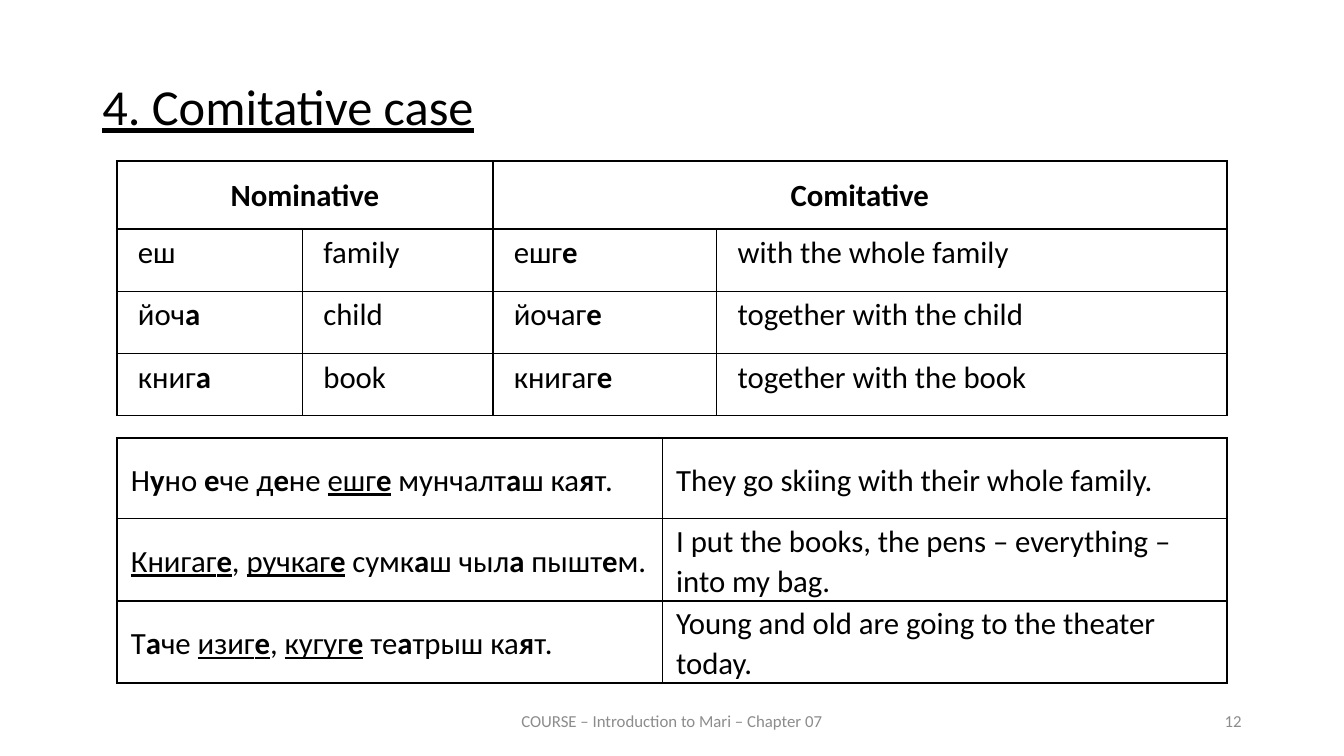
from pptx import Presentation
from pptx.dml.color import RGBColor
from pptx.enum.text import MSO_ANCHOR as Anchor, PP_ALIGN as Align
from pptx.oxml import parse_xml
from pptx.oxml.ns import nsdecls
from pptx.util import Pt

BLACK = RGBColor(0, 0, 0)
GRAY = RGBColor(0x8C, 0x8C, 0x8C)
FONT = "Calibri"
THIN, THICK = 1, 1.5
BOLD, UNDER = "*", "_"

TEXTS = [
    dict(text="COURSE – Introduction to Mari – Chapter 07", box=(318, 500.5, 324, 28.8),
         size=12, color=GRAY, align=Align.CENTER, anchor=Anchor.MIDDLE),
    dict(text="12", box=(678, 500.5, 216, 28.8),
         size=12, color=GRAY, align=Align.RIGHT, anchor=Anchor.MIDDLE),
    dict(text="_4. Comitative case_", box=(66, 54.7, 828, 59.8), size=36, color=BLACK,
         align=Align.JUSTIFY, anchor=Anchor.TOP, space=0.9, before=12),
]
CASES = dict(
    top=115, cols=(132.5, 136, 160, 364.2), rows=(47.7, 44.4, 44.4, 44.4),
    heavy=(0, 2, 4), head=True, pad=(15, 2, 15, 0),
    align=Align.JUSTIFY, anchor=Anchor.TOP,
    cells=[
        ("*Nominative*", None, "*Comitative*", None),
        ("еш", "family", "ешг*е*", "with the whole family"),
        ("йоч*а*", "child", "йочаг*е*", "together with the child"),
        ("книг*а*", "book", "книгаг*е*", "together with the book"),
    ])
SAMPLES = dict(
    top=312.8, cols=(389.5, 403.2), rows=(57.8, 57.8, 57.8),
    heavy=(0, 2), head=False, pad=(10, 1.4, 10, 0),
    align=Align.LEFT, anchor=Anchor.MIDDLE,
    cells=[
        ("Н*у*но *е*че д*е*не _ешг*е*_ мунчалт*а*ш ка*я*т.",
         "They go skiing with their whole family."),
        ("_Книгаг*е*_, _ручкаг*е*_ сумк*а*ш чыл*а* пышт*е*м.",
         "I put the books, the pens – everything – into my bag."),
        ("Т*а*че _изиг*е*_, _кугуг*е*_ те*а*трыш ка*я*т.",
         "Young and old are going to the theater today."),
    ])
LEFT = 83.5


def write(frame, text, size, color, align, space=None, before=None):
    para = frame.paragraphs[0]
    para.alignment = align
    if space:
        para.line_spacing = space
    if before:
        para.space_before = Pt(before)
    under = False
    for i, chunk in enumerate(text.split(BOLD)):
        for j, part in enumerate(chunk.split(UNDER)):
            if j:
                under = not under
            if part:
                run = para.add_run()
                run.text = part
                font = run.font
                font.name, font.size = FONT, Pt(size)
                font.bold, font.underline = i % 2 == 1, under
                font.color.rgb = color


def border(cell, widths):
    props = cell._tc.get_or_add_tcPr()
    for i, (side, width) in enumerate(zip("LRTB", widths)):
        props.insert(i, parse_xml(
            f'<a:ln{side} {nsdecls("a")} w="{Pt(width)}"><a:solidFill>'
            f'<a:srgbClr val="{BLACK}"/></a:solidFill></a:ln{side}>'))


def add_grid(slide, top, cols, rows, heavy, head, pad, align, anchor, cells):
    table = slide.shapes.add_table(len(rows), len(cols), Pt(LEFT), Pt(top),
                                   Pt(sum(cols)), Pt(sum(rows))).table
    table.first_row = table.horz_banding = False
    for col, width in zip(table.columns, cols):
        col.width = Pt(width)
    for row, height in zip(table.rows, rows):
        row.height = Pt(height)
    lines = (0, 1, len(rows)) if head else (0, len(rows))
    for r, line in enumerate(cells):
        for c, text in enumerate(line):
            cell = table.cell(r, c)
            title = head and r == 0
            inset = (20, 10, 20, 10) if title else pad
            (cell.margin_left, cell.margin_top,
             cell.margin_right, cell.margin_bottom) = map(Pt, inset)
            cell.vertical_anchor = anchor
            cell.fill.background()
            edges = [c in heavy, c + 1 in heavy, r in lines, r + 1 in lines]
            border(cell, [THICK if title or e else THIN for e in edges])
            if text is None:
                table.cell(r, c - 1).merge(cell)
            else:
                write(cell.text_frame, text, 22, BLACK,
                      Align.CENTER if title else align, 1.07)


def add_text(slide, box, anchor, **style):
    frame = slide.shapes.add_textbox(*map(Pt, box)).text_frame
    frame.word_wrap = True
    frame.vertical_anchor = anchor
    write(frame, **style)


def main():
    deck = Presentation()
    deck.slide_width, deck.slide_height = Pt(960), Pt(540)
    slide = deck.slides.add_slide(deck.slide_layouts[6])
    for grid in (CASES, SAMPLES):
        add_grid(slide, **grid)
    for item in TEXTS:
        add_text(slide, **item)
    deck.save("out.pptx")


if __name__ == "__main__":
    main()
